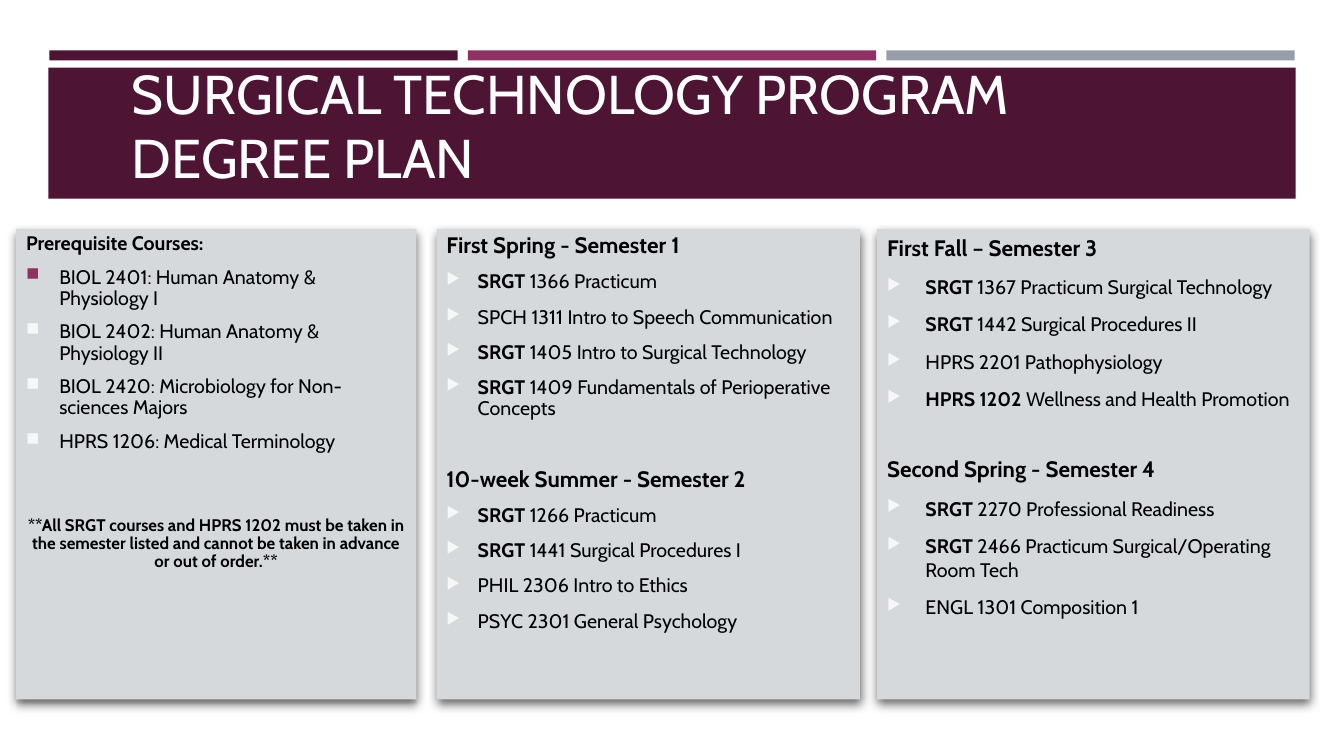
import pptx
import pptx.util
import pptx.dml.color
import pptx.enum.shapes
import pptx.enum.text
from dataclasses import dataclass
from lxml import etree
from pptx.oxml.ns import qn
from pptx.util import Inches, Pt


@dataclass(frozen=True)
class Theme:
    font: str = "Cabin"
    plum: str = "4D1434"
    rose: str = "903163"
    gray: str = "969FA7"
    panel: str = "D5D9DC"
    pale: str = "F7F7F7"
    white: str = "FFFFFF"
    black: str = "000000"
    title: int = 39
    head: int = 16
    body: int = 14
    note: int = 12


THEME = Theme()

# Each course is a bold part and a plain part
PREREQS = [
    ("", "BIOL 2401: Human Anatomy & Physiology I"),
    ("", "BIOL 2402: Human Anatomy & Physiology II"),
    ("", "BIOL 2420: Microbiology for Non-sciences Majors"),
    ("", "HPRS 1206: Medical Terminology"),
]
NOTE = ("**All SRGT courses and HPRS 1202 must be taken in the semester listed "
        "and cannot be taken in advance or out of order.**")
YEAR1 = [
    ("First Spring - Semester 1", [
        ("SRGT ", "1366 Practicum"),
        ("", "SPCH 1311 Intro to Speech Communication"),
        ("SRGT ", "1405 Intro to Surgical Technology"),
        ("SRGT ", "1409 Fundamentals of Perioperative Concepts")]),
    ("10-week Summer - Semester 2", [
        ("SRGT ", "1266 Practicum"),
        ("SRGT ", "1441 Surgical Procedures I"),
        ("", "PHIL 2306 Intro to Ethics"),
        ("", "PSYC 2301 General Psychology")]),
]
YEAR2 = [
    ("First Fall – Semester 3", [
        ("SRGT ", "1367 Practicum Surgical Technology"),
        ("SRGT ", "1442 Surgical Procedures II"),
        ("", "HPRS 2201 Pathophysiology"),
        ("HPRS 1202 ", "Wellness and Health Promotion")]),
    ("Second Spring - Semester 4", [
        ("SRGT ", "2270 Professional Readiness"),
        ("SRGT ", "2466 Practicum Surgical/Operating Room Tech"),
        ("", "ENGL 1301 Composition 1")]),
]


def color(code):
    return pptx.dml.color.RGBColor.from_string(code)


def add_rect(slide, left, top, width, height, fill):
    rect = slide.shapes.add_shape(
        pptx.enum.shapes.MSO_SHAPE.RECTANGLE,
        Inches(left), Inches(top), Inches(width), Inches(height))
    rect.shadow.inherit = False
    rect.fill.solid()
    rect.fill.fore_color.rgb = color(fill)
    rect.line.fill.background()
    return rect


def add_shade(shape):
    effects = shape._element.spPr.find(qn("a:effectLst"))
    shade = etree.SubElement(
        effects, qn("a:outerShdw"), blurRad=str(Pt(7)), dist=str(Pt(3)),
        dir=str(84 * 60000), algn="t", rotWithShape="0")
    tint = etree.SubElement(shade, qn("a:srgbClr"), val=THEME.black)
    etree.SubElement(tint, qn("a:alpha"), val="60000")


def add_panel(slide, left, width):
    panel = add_rect(slide, left, 2.27, width, 4.67, THEME.panel)
    add_shade(panel)
    frame = panel.text_frame
    frame.word_wrap = True
    frame.vertical_anchor = pptx.enum.text.MSO_ANCHOR.TOP
    return frame


def add_run(para, text, size, bold=False, ink=THEME.black):
    run = para.add_run()
    run.text = text
    run.font.name = THEME.font
    run.font.size = Pt(size)
    run.font.bold = bold
    run.font.color.rgb = color(ink)


def add_para(frame, before, after=0, lines=1.0, center=False):
    first = frame.paragraphs[0]
    fresh = not first.runs
    para = first if fresh else frame.add_paragraph()
    align = pptx.enum.text.PP_ALIGN
    para.alignment = align.CENTER if center else align.LEFT
    para.line_spacing = lines
    para.space_before = Pt(0 if fresh else before)
    para.space_after = Pt(after)
    return para


def add_bullet(para, mark, ink, scale, indent):
    props = para._p.get_or_add_pPr()
    props.set("marL", str(Inches(indent)))
    props.set("indent", str(-Inches(indent)))
    tint = etree.SubElement(props, qn("a:buClr"))
    etree.SubElement(tint, qn("a:srgbClr"), val=ink)
    etree.SubElement(props, qn("a:buSzPct"), val=str(scale * 1000))
    etree.SubElement(props, qn("a:buChar"), char=mark)


def add_course(para, course):
    strong, plain = course
    if strong:
        add_run(para, strong, THEME.body, True)
    add_run(para, plain, THEME.body)


def add_title(slide):
    box = slide.shapes.add_textbox(
        Inches(1.21), Inches(0.5), Inches(10.77), Inches(1.53))
    frame = box.text_frame
    frame.word_wrap = True
    frame.vertical_anchor = pptx.enum.text.MSO_ANCHOR.MIDDLE
    para = add_para(frame, 0, lines=0.98)
    add_run(para, "SURGICAL TECHNOLOGY PROGRAM", THEME.title, ink=THEME.white)
    para.add_line_break()
    add_run(para, "DEGREE PLAN", THEME.title, ink=THEME.white)


def add_prereqs(slide):
    frame = add_panel(slide, 0.16, 3.97)
    para = add_para(frame, 2.8, 6, 0.9)
    add_run(para, "Prerequisite Courses:", THEME.body, True)
    for index, course in enumerate(PREREQS):
        para = add_para(frame, 2.8, 6, 0.9)
        ink = THEME.pale if index else THEME.rose
        add_bullet(para, "■", ink, 92, 0.33)
        add_course(para, course)
    para = add_para(frame, 40, 6, 0.9, center=True)
    add_run(para, NOTE, THEME.note, True)


def add_terms(slide, left, width, terms, lines, indent):
    frame = add_panel(slide, left, width)
    for index, (head, courses) in enumerate(terms):
        # A later term stands apart from the one above it
        para = add_para(frame, 32, lines=1.0 if index else lines)
        add_run(para, head, THEME.head, True)
        for course in courses:
            para = add_para(frame, 10, lines=lines)
            add_bullet(para, "▶", THEME.pale, 80, indent)
            add_course(para, course)


def main():
    deck = pptx.Presentation()
    deck.slide_width = Inches(13.33)
    deck.slide_height = Inches(7.5)
    slide = deck.slides.add_slide(deck.slide_layouts[6])

    # Top bars and title band
    for index, fill in enumerate((THEME.plum, THEME.rose, THEME.gray)):
        add_rect(slide, 0.49 + 4.15 * index, 0.5, 4.05, 0.1, fill)
    add_rect(slide, 0.48, 0.67, 12.37, 1.3, THEME.plum)
    add_title(slide)

    # Three course panels
    add_prereqs(slide)
    add_terms(slide, 4.33, 4.2, YEAR1, 0.9, 0.31)
    add_terms(slide, 8.7, 4.29, YEAR2, 1.0, 0.38)
    deck.save("out.pptx")


if __name__ == "__main__":
    main()
